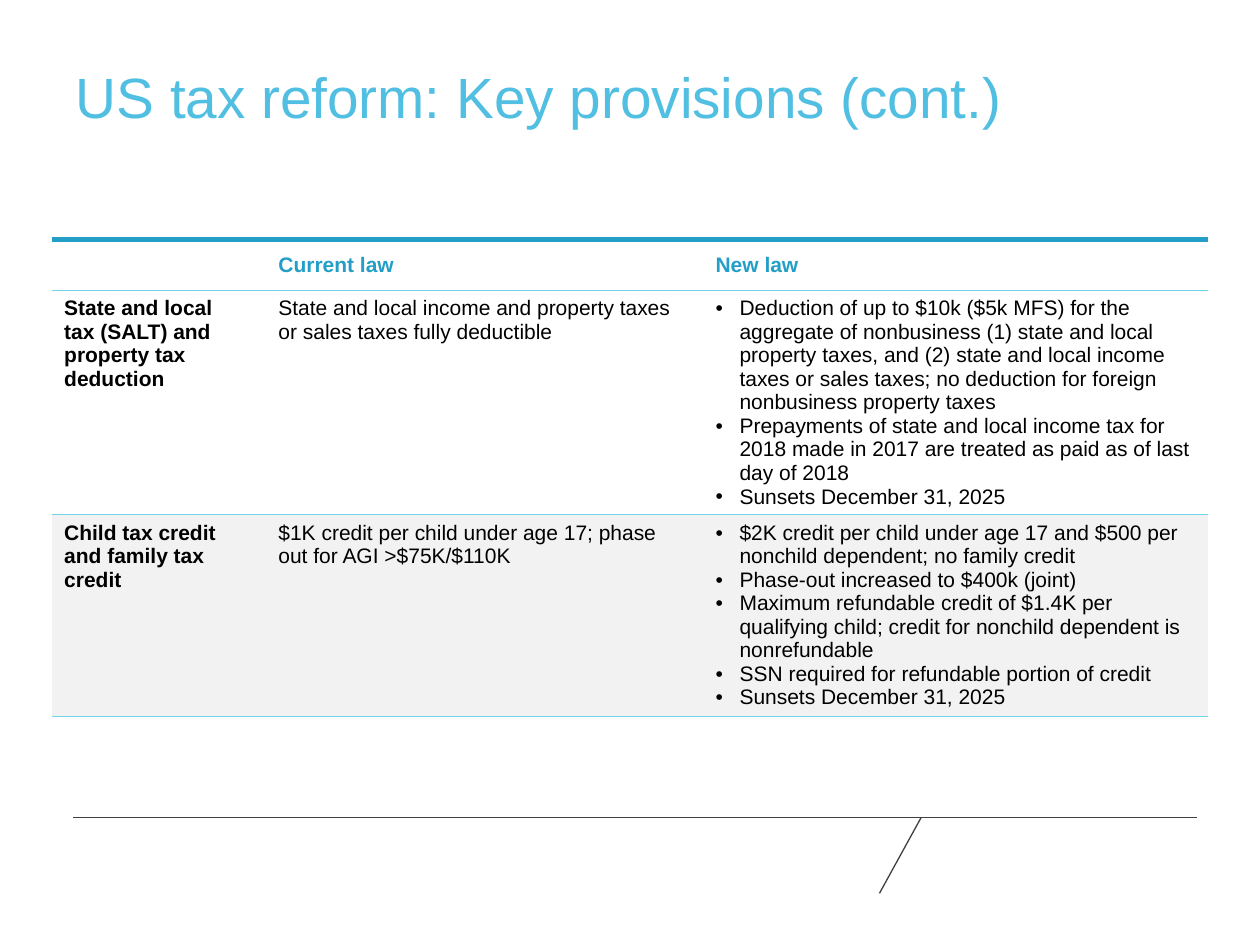
from dataclasses import dataclass

from lxml.etree import SubElement
from pptx import Presentation
from pptx.dml.color import RGBColor as Color
from pptx.enum.shapes import MSO_CONNECTOR as Connector
from pptx.enum.text import MSO_ANCHOR as Anchor, MSO_AUTO_SIZE as AutoSize, PP_ALIGN as Align
from pptx.oxml.ns import qn
from pptx.util import Inches, Pt


@dataclass(frozen=True)
class Theme:
    font: str = "Arial"
    title_size: float = 32.4
    body_size: float = 12
    title: str = "51BFE1"
    heading: str = "239FC7"
    rule: str = "71D4E8"
    text: str = "000000"
    frame: str = "3F3F42"
    plain: str = "FFFFFF"
    shaded: str = "F2F2F2"


THEME = Theme()
WIDTH, HEIGHT = 10, 7.5
TITLE = "US tax reform: Key provisions (cont.)"
HEADINGS = ["", "Current law", "New law"]
PROVISIONS = [
    (
        ["State and local", "tax (SALT) and", "property tax", "deduction"],
        ["State and local income and property taxes or sales taxes fully deductible"],
        [
            "Deduction of up to $10k ($5k MFS) for the aggregate of nonbusiness (1) state and local "
            "property taxes, and (2) state and local income taxes or sales taxes; no deduction for "
            "foreign nonbusiness property taxes",
            "Prepayments of state and local income tax for 2018 made in 2017 are treated as paid "
            "as of last day of 2018",
            "Sunsets December 31, 2025",
        ],
    ),
    (
        ["Child tax credit and family tax credit"],
        ["$1K credit per child under age 17; phase out for AGI >$75K/$110K"],
        [
            "$2K credit per child under age 17 and $500 per nonchild dependent; no family credit",
            "Phase-out increased to $400k (joint)",
            "Maximum refundable credit of $1.4K per qualifying child; credit for nonchild "
            "dependent is nonrefundable",
            "SSN required for refundable portion of credit",
            "Sunsets December 31, 2025",
        ],
    ),
]
COLUMNS = [1.7, 3.47, 4.01]
ROWS = [0.4, 1.78, 1.6]
TABLE_LEFT, TABLE_TOP = 0.41, 1.9
INDENT = 0.19
FOOTER_LINE = 6.49
FRAME_LINES = [
    ((0.58, FOOTER_LINE), (9.5, FOOTER_LINE)),
    ((6.98, 7.09), (7.31, FOOTER_LINE)),
]


def write(para, text, size, color, bold=False):
    span = para.add_run()
    span.text = text
    span.font.name = THEME.font
    span.font.size = Pt(size)
    span.font.bold = bold
    span.font.color.rgb = Color.from_string(color)


def add_bullet(para):
    props = para._p.get_or_add_pPr()
    props.set("marL", str(Inches(INDENT)))
    props.set("indent", str(-Inches(INDENT)))
    SubElement(props, qn("a:buFont"), typeface=THEME.font)
    SubElement(props, qn("a:buChar"), char="•")


def set_borders(cell, top, bottom):
    props = cell._tc.get_or_add_tcPr()
    for side, border in (("L", None), ("R", None), ("T", top), ("B", bottom)):
        if border is None:
            SubElement(SubElement(props, qn(f"a:ln{side}"), w="0"), qn("a:noFill"))
            continue
        color, points = border
        line = SubElement(props, qn(f"a:ln{side}"), w=str(Pt(points)))
        SubElement(SubElement(line, qn("a:solidFill")), qn("a:srgbClr"), val=color)


def fill_cell(cell, lines, color, bold, bulleted):
    for index, text in enumerate(lines):
        frame = cell.text_frame
        para = frame.add_paragraph() if index else frame.paragraphs[0]
        if bulleted:
            add_bullet(para)
        write(para, text, THEME.body_size, color, bold)


def add_title(page):
    box = page.shapes.title
    box.left, box.top, box.width, box.height = map(Inches, (0.5, 0.5, 7.83, 1.16))
    frame = box.text_frame
    frame.auto_size = AutoSize.NONE
    frame.word_wrap = True
    frame.vertical_anchor = Anchor.TOP
    para = frame.paragraphs[0]
    para.alignment = Align.LEFT
    para.line_spacing = 0.9
    write(para, TITLE, THEME.title_size, THEME.title)


def add_provisions(page):
    grid = page.shapes.add_table(
        len(ROWS), len(COLUMNS), Inches(TABLE_LEFT), Inches(TABLE_TOP),
        Inches(sum(COLUMNS)), Inches(sum(ROWS)),
    ).table
    grid.first_row = grid.horz_banding = False
    for column, width in zip(grid.columns, COLUMNS):
        column.width = Inches(width)
    for row, height in zip(grid.rows, ROWS):
        row.height = Inches(height)

    thin, thick = (THEME.rule, 0.5), (THEME.heading, 3)
    contents = [[[heading] for heading in HEADINGS], *PROVISIONS]
    fills = [THEME.plain, THEME.plain, THEME.shaded]
    for r, row in enumerate(contents):
        header = r == 0
        for c, lines in enumerate(row):
            cell = grid.cell(r, c)
            set_borders(cell, thick if header else thin, thin)
            cell.fill.solid()
            cell.fill.fore_color.rgb = Color.from_string(fills[r])
            cell.vertical_anchor = Anchor.MIDDLE if header else Anchor.TOP
            fill_cell(
                cell, [line for line in lines if line],
                THEME.heading if header else THEME.text,
                bold=header or c == 0, bulleted=not header and c == 2,
            )


def add_frame_lines(page):
    for start, end in FRAME_LINES:
        line = page.shapes.add_connector(Connector.STRAIGHT, *map(Inches, start + end))
        line.line.color.rgb = Color.from_string(THEME.frame)
        line.line.width = Pt(0.75)
        SubElement(line._element.spPr, qn("a:effectLst"))


def main():
    deck = Presentation()
    deck.slide_width, deck.slide_height = Inches(WIDTH), Inches(HEIGHT)
    page = deck.slides.add_slide(deck.slide_layouts.get_by_name("Title Only"))
    add_frame_lines(page)
    add_title(page)
    add_provisions(page)
    deck.save("out.pptx")


if __name__ == "__main__":
    main()
